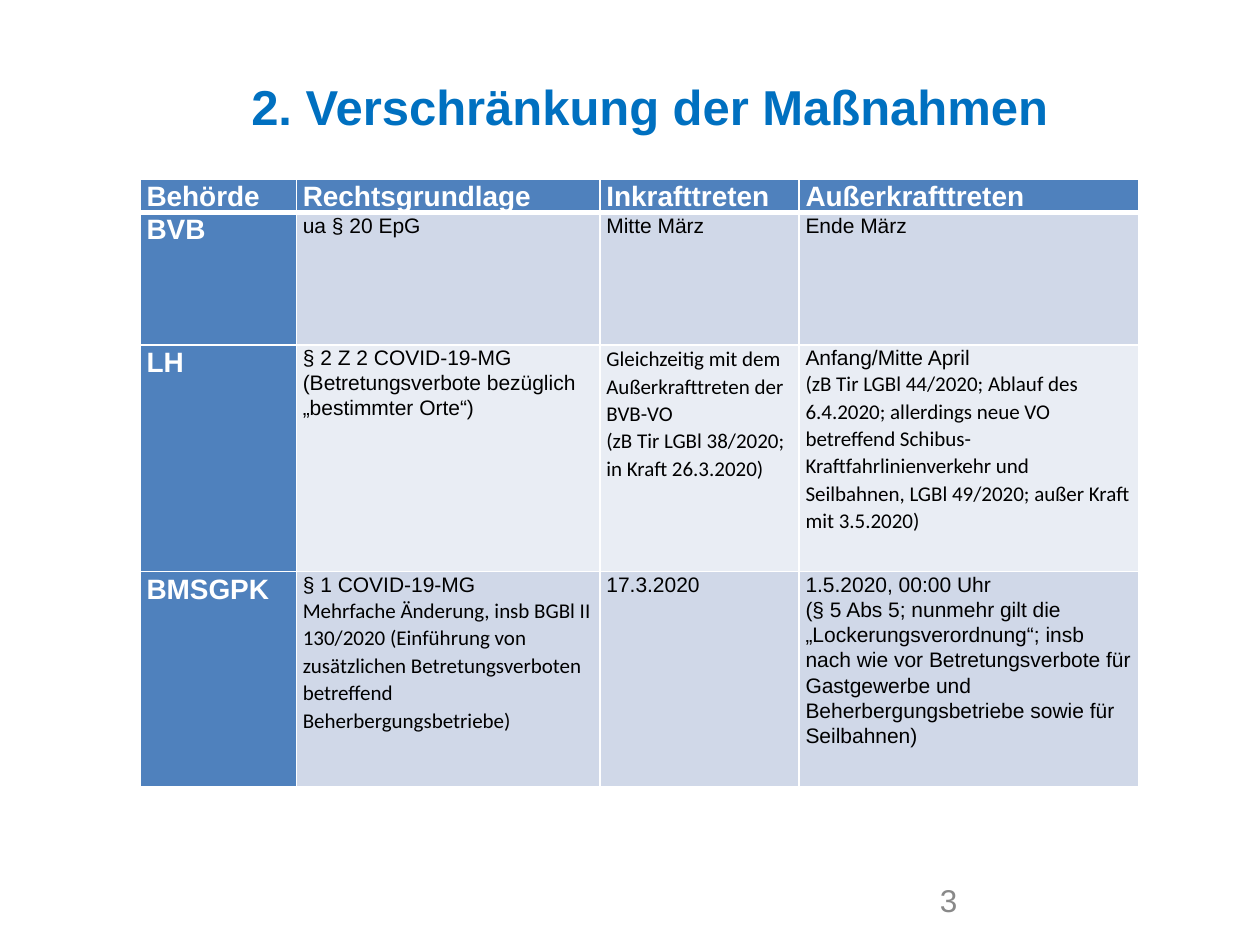
from lxml import etree
from pptx import Presentation
from pptx.dml.color import RGBColor
from pptx.enum.text import MSO_ANCHOR, PP_ALIGN
from pptx.oxml.ns import qn
from pptx.util import Pt

TOP, MIDDLE = MSO_ANCHOR.TOP, MSO_ANCHOR.MIDDLE
CENTER = PP_ALIGN.CENTER
COLORS = {"title": "0070C0", "head": "4F81BD", "dark": "D0D8E8",
          "light": "E9EDF4", "white": "FFFFFF", "black": "000000",
          "gray": "898989"}
SANS, BODY = "Arial", "Calibri"
COLS = [89.3, 173.5, 113.8, 194.4]
ROWS = [18, 75.6, 129.6, 123.1]
# Each cell is a list of (text, font) paragraphs.
CELLS = [
    [[("Behörde", SANS)], [("Rechtsgrundlage", SANS)],
     [("Inkrafttreten", SANS)], [("Außerkrafttreten", SANS)]],
    [[("BVB", SANS)], [("ua § 20 EpG", SANS)],
     [("Mitte März", SANS)], [("Ende März", SANS)]],
    [[("LH", SANS)],
     [("§ 2 Z 2 COVID-19-MG (Betretungsverbote bezüglich "
       "„bestimmter Orte“)", SANS)],
     [("Gleichzeitig mit dem Außerkrafttreten der BVB-VO", BODY),
      ("(zB Tir LGBl 38/2020; in Kraft 26.3.2020)", BODY)],
     [("Anfang/Mitte April", SANS),
      ("(zB Tir LGBl 44/2020; Ablauf des 6.4.2020; allerdings neue VO "
       "betreffend Schibus-Kraftfahrlinienverkehr und Seilbahnen, "
       "LGBl 49/2020; außer Kraft mit 3.5.2020)", BODY)]],
    [[("BMSGPK", SANS)],
     [("§ 1 COVID-19-MG", SANS),
      ("Mehrfache Änderung, insb BGBl II 130/2020 (Einführung von "
       "zusätzlichen Betretungsverboten betreffend "
       "Beherbergungsbetriebe)", BODY)],
     [("17.3.2020", SANS)],
     [("1.5.2020, 00:00 Uhr", SANS),
      ("(§ 5 Abs 5; nunmehr gilt die „Lockerungsverordnung“; insb nach wie "
       "vor Betretungsverbote für Gastgewerbe und Beherbergungsbetriebe "
       "sowie für Seilbahnen)", SANS)]],
]


def style(para, name, size, color, bold=False):
    font = para.font
    font.name, font.size, font.bold = name, Pt(size), bold
    font.color.rgb = RGBColor.from_string(COLORS[color])


def border(cell, widths):
    """Draw white cell borders; widths maps each side tag to points."""
    props = cell._tc.get_or_add_tcPr()
    for spot, (side, width) in enumerate(widths.items()):
        line = etree.Element(qn("a:" + side), w=str(Pt(width)))
        fill = etree.SubElement(line, qn("a:solidFill"))
        etree.SubElement(fill, qn("a:srgbClr"), val=COLORS["white"])
        props.insert(spot, line)


prs = Presentation()
prs.slide_width, prs.slide_height = Pt(720), Pt(540)
slide = prs.slides.add_slide(prs.slide_layouts[5])

title = slide.shapes.title
title.left, title.top = Pt(92.2), Pt(40.3)
title.width, title.height = Pt(558), Pt(415.4)
frame = title.text_frame
frame.text = "2. Verschränkung der Maßnahmen"
frame.vertical_anchor = TOP
frame.paragraphs[0].alignment = CENTER
style(frame.paragraphs[0], SANS, 28, "title", True)

table = slide.shapes.add_table(
    len(ROWS), len(COLS), Pt(80), Pt(102.5), Pt(sum(COLS)), Pt(sum(ROWS))).table
table.first_col = True
for col, width in zip(table.columns, COLS):
    col.width = Pt(width)
for row, height in zip(table.rows, ROWS):
    row.height = Pt(height)

for r, line in enumerate(CELLS):
    for c, paras in enumerate(line):
        cell = table.cell(r, c)
        cell.margin_left = cell.margin_right = Pt(3.75)
        cell.margin_top = cell.margin_bottom = 0
        head = r == 0 or c == 0
        shade = "head" if head else "dark" if r % 2 else "light"
        cell.fill.solid()
        cell.fill.fore_color.rgb = RGBColor.from_string(COLORS[shade])
        border(cell, {"lnL": 1, "lnR": 1, "lnT": 3 if r == 1 else 1,
                      "lnB": 3 if r == 0 else 1})
        frame = cell.text_frame
        for i, (text, name) in enumerate(paras):
            para = frame.add_paragraph() if i else frame.paragraphs[0]
            para.text = text
            para.line_spacing = 1.07
            if r == 0:
                para.space_after = Pt(6)
            if head:
                style(para, name, 16, "white", True)
            else:
                style(para, name, 12, "black")

number = slide.shapes.add_textbox(Pt(530), Pt(499.7), Pt(167.8), Pt(28.8))
frame = number.text_frame
frame.word_wrap = True
frame.vertical_anchor = MIDDLE
frame.text = "3"
style(frame.paragraphs[0], SANS, 18, "gray")

prs.save("out.pptx")
